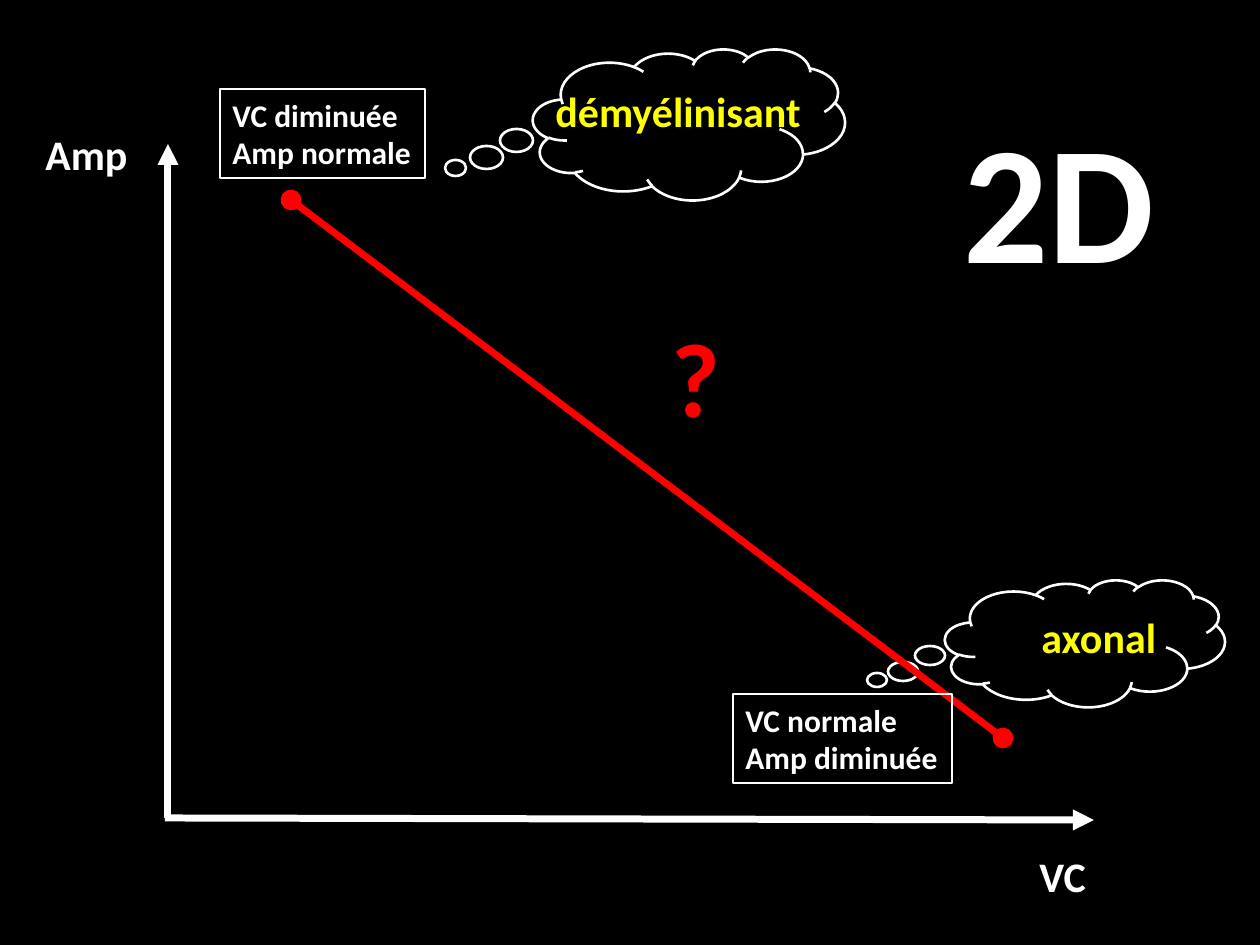
from typing import NamedTuple

from lxml.etree import SubElement
from pptx import Presentation
from pptx.dml.color import RGBColor
from pptx.enum.shapes import MSO_CONNECTOR, MSO_SHAPE
from pptx.enum.text import MSO_AUTO_SIZE
from pptx.oxml.ns import qn
from pptx.shapes.autoshape import Shape
from pptx.shapes.shapetree import GroupShapes, SlideShapes
from pptx.util import Emu, Pt

EMU_PER_PX = 914400 / 126
BLACK = RGBColor(0x00, 0x00, 0x00)
WHITE = RGBColor(0xFF, 0xFF, 0xFF)
RED = RGBColor(0xFF, 0x00, 0x00)
YELLOW = RGBColor(0xFF, 0xFF, 0x00)


class Box(NamedTuple):
    left: int
    top: int
    width: int
    height: int


class Label(NamedTuple):
    text: str
    box: Box
    size: int
    color: RGBColor


class Line(NamedTuple):
    start: tuple[int, int]
    end: tuple[int, int]
    color: RGBColor
    ends: dict[str, str]


class Thought(NamedTuple):
    cloud: Box
    bubbles: tuple[Box, ...]


AXONAL_THOUGHT = Thought(
    Box(945, 580, 280, 127),
    (Box(867, 673, 20, 14), Box(888, 662, 30, 19), Box(915, 646, 30, 19)),
)
DEMYELINATING_THOUGHT = Thought(
    Box(533, 49, 312, 151),
    (Box(445, 160, 21, 16), Box(470, 146, 33, 23), Box(500, 129, 33, 23)),
)
AXES = (
    Line((165, 818), (1094, 820), WHITE, {"tailEnd": "triangle"}),
    Line((168, 818), (168, 144), WHITE, {"tailEnd": "triangle"}),
)
TREND = Line((291, 200), (1003, 738), RED, {"headEnd": "oval", "tailEnd": "oval"})
LABELS = (
    Label("Amp", Box(33, 122, 108, 63), 24, WHITE),
    Label("VC", Box(1027, 844, 72, 63), 24, WHITE),
    Label("démyélinisant", Box(543, 79, 273, 63), 24, YELLOW),
    Label("axonal", Box(1029, 605, 141, 63), 24, YELLOW),
    Label("?", Box(659, 306, 74, 140), 60, RED),
    Label("2D", Box(951, 89, 218, 217), 96, WHITE),
)
FRAMED_LABELS = (
    Label("VC diminuée\nAmp normale", Box(220, 89, 205, 89), 18, WHITE),
    Label("VC normale\nAmp diminuée", Box(733, 694, 219, 89), 18, WHITE),
)


def px(value: int) -> Emu:
    return Emu(round(value * EMU_PER_PX))


def place(box: Box) -> tuple[Emu, ...]:
    return tuple(px(value) for value in box)


def add_outline(shapes: GroupShapes | SlideShapes, kind: MSO_SHAPE, box: Box) -> Shape:
    shape = shapes.add_shape(kind, *place(box))
    shape.shadow.inherit = False
    shape.fill.background()
    shape.line.color.rgb = WHITE
    shape.line.width = Pt(1.5)
    return shape


def add_thought(shapes: SlideShapes, thought: Thought) -> None:
    group = shapes.add_group_shape()
    add_outline(group.shapes, MSO_SHAPE.CLOUD, thought.cloud)
    for bubble in thought.bubbles:
        add_outline(group.shapes, MSO_SHAPE.OVAL, bubble)


def add_line(shapes: GroupShapes | SlideShapes, line: Line) -> None:
    points = [px(value) for value in line.start + line.end]
    connector = shapes.add_connector(MSO_CONNECTOR.STRAIGHT, *points)
    connector.line.color.rgb = line.color
    connector.line.width = Pt(4)
    outline = connector.line._get_or_add_ln()
    for tag, kind in line.ends.items():
        SubElement(outline, qn(f"a:{tag}"), type=kind)
    SubElement(connector._element.spPr, qn("a:effectLst"))


def write_label(shape: Shape, label: Label) -> None:
    frame = shape.text_frame
    frame.text = label.text
    frame.word_wrap = False
    frame.auto_size = MSO_AUTO_SIZE.SHAPE_TO_FIT_TEXT
    font_format = {"name": "Calibri", "size": Pt(label.size), "bold": True}
    for paragraph in frame.paragraphs:
        paragraph.alignment = 1
        font = paragraph.runs[0].font
        for name, value in font_format.items():
            setattr(font, name, value)
        font.color.rgb = label.color


def main() -> None:
    presentation = Presentation()
    presentation.slide_width = px(1260)
    presentation.slide_height = px(945)
    slide = presentation.slides.add_slide(presentation.slide_layouts[6])
    slide.background.fill.solid()
    slide.background.fill.fore_color.rgb = BLACK
    shapes = slide.shapes

    add_thought(shapes, AXONAL_THOUGHT)
    axes = shapes.add_group_shape()
    for axis in AXES:
        add_line(axes.shapes, axis)
    for label in LABELS[:2]:
        write_label(shapes.add_textbox(*place(label.box)), label)
    add_line(shapes, TREND)
    for label in LABELS[2:]:
        write_label(shapes.add_textbox(*place(label.box)), label)
    for label in FRAMED_LABELS:
        write_label(add_outline(shapes, MSO_SHAPE.RECTANGLE, label.box), label)
    add_thought(shapes, DEMYELINATING_THOUGHT)

    presentation.save("out.pptx")


if __name__ == "__main__":
    main()
